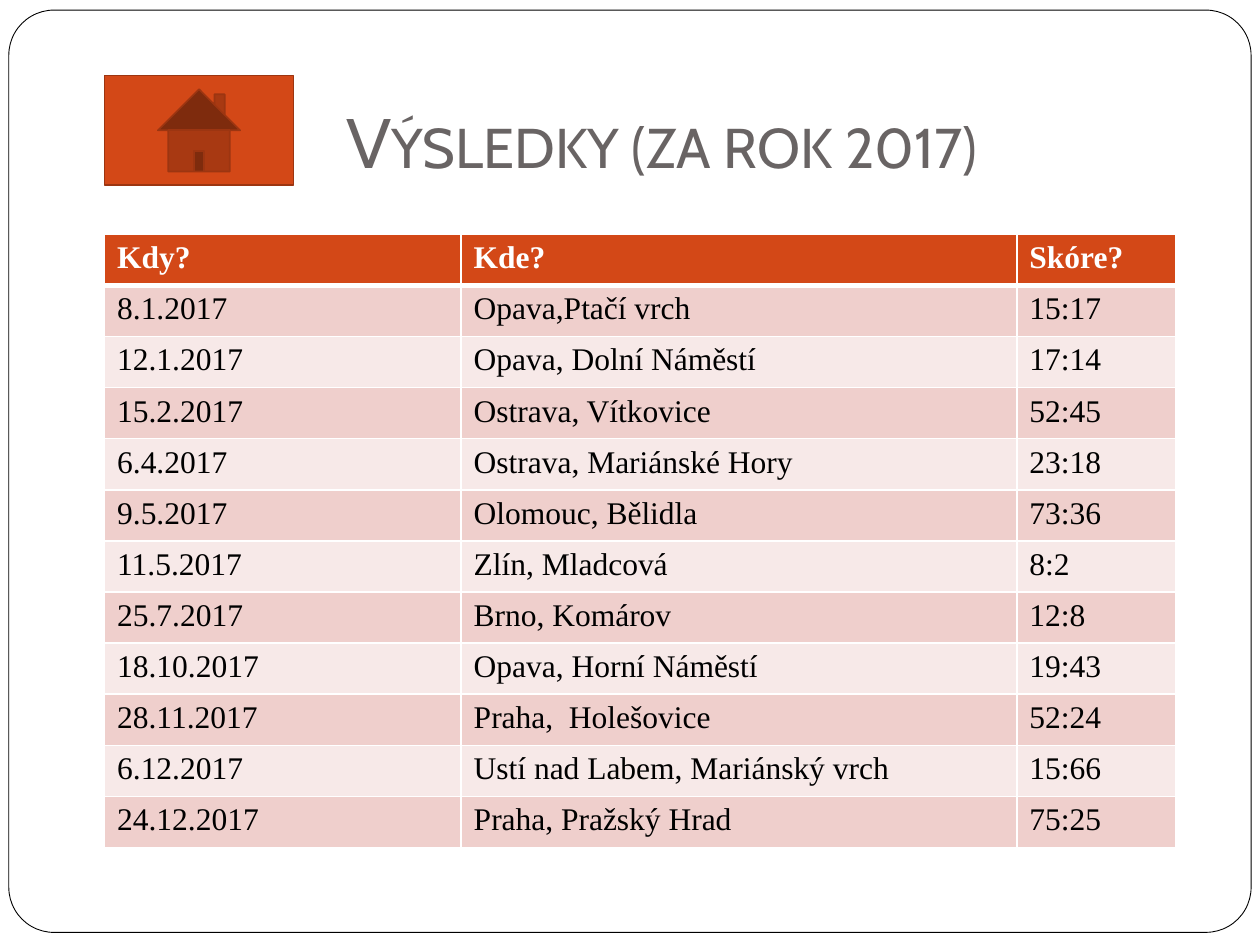
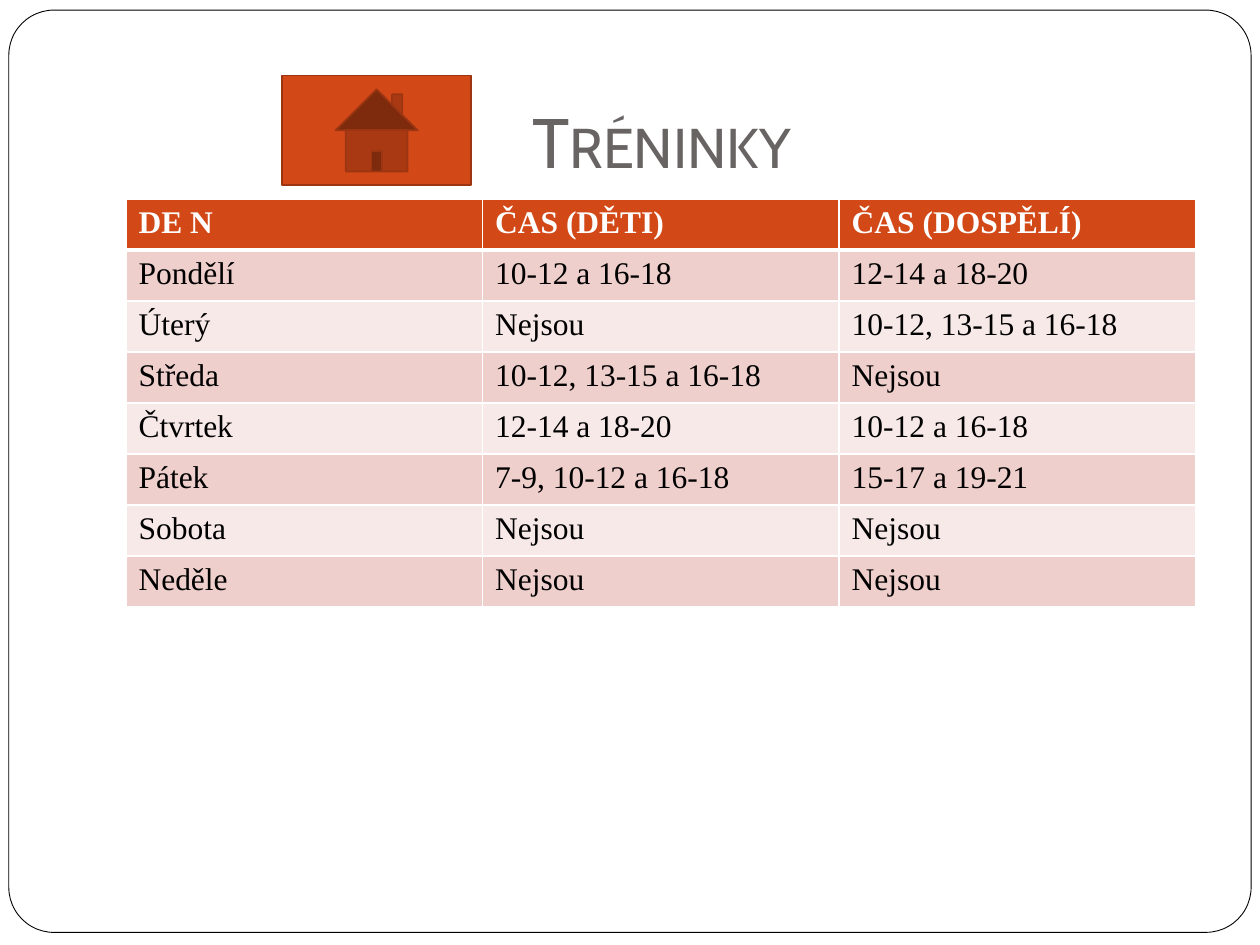
import pptx
import pptx.util
import pptx.dml.color
import pptx.enum.shapes
import pptx.enum.text
import pptx.oxml
import pptx.oxml.ns

Inches = pptx.util.Inches
Pt = pptx.util.Pt
Shape = pptx.enum.shapes.MSO_SHAPE

COLORS = {
    "white": "FFFFFF",
    "black": "000000",
    "title": "696464",
    "head": "D34817",
    "edge": "9C3511",
    "odd": "EFCFCC",
    "even": "F7E9E8",
}

RESULTS = [
    ("Kdy?", "Kde?", "Skóre?"),
    ("8.1.2017", "Opava,Ptačí vrch", "15:17"),
    ("12.1.2017", "Opava, Dolní Náměstí", "17:14"),
    ("15.2.2017", "Ostrava, Vítkovice", "52:45"),
    ("6.4.2017", "Ostrava, Mariánské Hory", "23:18"),
    ("9.5.2017", "Olomouc, Bělidla", "73:36"),
    ("11.5.2017", "Zlín, Mladcová", "8:2"),
    ("25.7.2017", "Brno, Komárov", "12:8"),
    ("18.10.2017", "Opava, Horní Náměstí", "19:43"),
    ("28.11.2017", "Praha,  Holešovice", "52:24"),
    ("6.12.2017", "Ustí nad Labem, Mariánský vrch", "15:66"),
    ("24.12.2017", "Praha, Pražský Hrad", "75:25"),
]

TRAINING = [
    ("DE N", "ČAS (DĚTI)", "ČAS (DOSPĚLÍ)"),
    ("Pondělí", "10-12 a 16-18", "12-14 a 18-20"),
    ("Úterý", "Nejsou", "10-12, 13-15 a 16-18"),
    ("Středa", "10-12, 13-15 a 16-18", "Nejsou"),
    ("Čtvrtek", "12-14 a 18-20", "10-12 a 16-18"),
    ("Pátek", "7-9, 10-12 a 16-18", "15-17 a 19-21"),
    ("Sobota", "Nejsou", "Nejsou"),
    ("Neděle", "Nejsou", "Nejsou"),
]


def color(name):
    return pptx.dml.color.RGBColor.from_string(COLORS[name])


class Deck:
    def __init__(self):
        self.file = pptx.Presentation()
        self.file.slide_width = Inches(10)
        self.file.slide_height = Inches(7.5)
        self.slide = None

    def page(self, title):
        self.slide = self.file.slides.add_slide(self.file.slide_layouts[6])
        frame = self.shape(Shape.ROUNDED_RECTANGLE, (0.07, 0.08, 9.86, 7.32), "white", "black", 0.5)
        frame.adjustments[0] = 0.049
        self.title(title)

    def shape(self, kind, box, fill, line, width):
        shape = self.slide.shapes.add_shape(kind, *map(Inches, box))
        shape.shadow.inherit = False
        shape.fill.solid()
        shape.fill.fore_color.rgb = color(fill)
        shape.line.color.rgb = color(line)
        shape.line.width = Pt(width)
        return shape

    def run(self, para, text, face, size, shade, bold=False):
        run = para.add_run()
        run.text = text
        run.font.name = face
        run.font.size = Pt(size)
        run.font.bold = bold
        run.font.color.rgb = color(shade)
        return run

    def title(self, text):
        box = self.slide.shapes.add_textbox(Inches(1), Inches(0.3), Inches(8.5), Inches(1.25))
        frame = box.text_frame
        frame.word_wrap = True
        frame.vertical_anchor = pptx.enum.text.MSO_ANCHOR.BOTTOM
        frame.margin_bottom = Inches(0.1)
        para = frame.paragraphs[0]
        para.alignment = pptx.enum.text.PP_ALIGN.CENTER
        run = self.run(para, text, "Cabin", 40, "title")
        run.font._element.set("cap", "small")

    def home(self, left):
        self.shape(Shape.ACTION_BUTTON_HOME, (left, 0.6, 1.5, 0.87), "head", "edge", 1)

    def border(self, cell, side, width):
        props = cell._tc.get_or_add_tcPr()
        line = pptx.oxml.parse_xml(
            f'<a:ln{side} {pptx.oxml.ns.nsdecls("a")} w="{Pt(width)}"><a:solidFill>'
            f'<a:srgbClr val="{COLORS["white"]}"/></a:solidFill></a:ln{side}>'
        )
        props.append(line)

    def table(self, left, top, height, widths, rows):
        box = map(Inches, (left, top, sum(widths), height))
        table = self.slide.shapes.add_table(len(rows), len(widths), *box).table
        table.horz_banding = False
        for column, width in zip(table.columns, widths):
            column.width = Inches(width)
        for i, row in enumerate(rows):
            head = i == 0
            fill = "head" if head else "odd" if i % 2 else "even"
            for j, text in enumerate(row):
                cell = table.cell(i, j)
                for side in "LRTB":
                    thick = (i, side) in ((0, "B"), (1, "T"))
                    self.border(cell, side, 3 if thick else 1)
                cell.fill.solid()
                cell.fill.fore_color.rgb = color(fill)
                para = cell.text_frame.paragraphs[0]
                self.run(para, text, "Times New Roman", 18, "white" if head else "black", head)


def main():
    deck = Deck()

    deck.page("Výsledky (za rok 2017)")
    deck.table(0.83, 1.86, 4.87, (2.83, 4.41, 1.26), RESULTS)
    deck.home(0.83)

    deck.page("Tréninky")
    deck.table(1, 1.58, 3.24, (2.83,) * 3, TRAINING)
    deck.home(2.24)

    deck.file.save("out.pptx")


if __name__ == "__main__":
    main()
